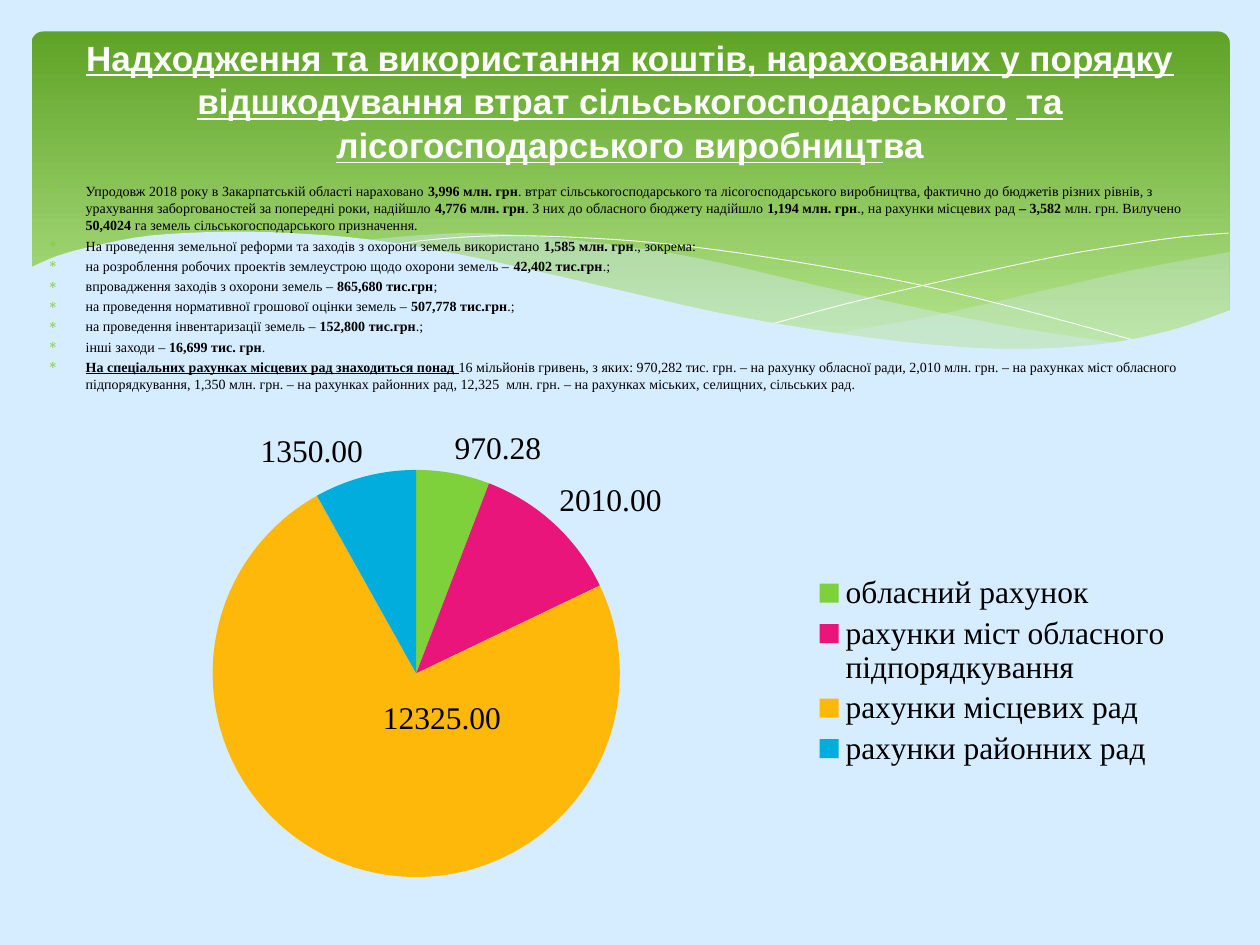
from lxml import etree
from pptx import Presentation
from pptx.chart.data import CategoryChartData
from pptx.dml.color import RGBColor
from pptx.enum.chart import XL_CHART_TYPE, XL_LABEL_POSITION, XL_LEGEND_POSITION
from pptx.enum.shapes import MSO_SHAPE
from pptx.enum.text import MSO_ANCHOR, MSO_AUTO_SIZE, PP_ALIGN
from pptx.oxml import parse_xml
from pptx.oxml.ns import nsdecls, qn
from pptx.util import Inches, Pt

PIE = XL_CHART_TYPE.PIE
OUT, MID = XL_LABEL_POSITION.OUTSIDE_END, XL_LABEL_POSITION.CENTER
RIGHT = XL_LEGEND_POSITION.RIGHT
ROUND = MSO_SHAPE.ROUNDED_RECTANGLE
CENTER, MIDDLE, FIXED = PP_ALIGN.CENTER, MSO_ANCHOR.MIDDLE, MSO_AUTO_SIZE.NONE

COLORS = {"sky": "D6ECFF", "dark": "5FA326", "light": "B2E389", "white": "FFFFFF",
          "black": "000000", "green": "7FD13B", "pink": "EA157A",
          "gold": "FEB80A", "blue": "00ADDC"}

TITLE = ("Надходження та використання коштів, нарахованих у порядку відшкодування "
         "втрат сільськогосподарського\t та лісогосподарського виробницт", "ва")

ITEMS = [
    "Упродовж 2018 року в Закарпатській області нараховано *3,996 млн. грн*. втрат "
    "сільськогосподарського та лісогосподарського виробництва, фактично до бюджетів "
    "різних рівнів, з урахування заборгованостей за попередні роки, надійшло "
    "*4,776 млн. грн*. З них до обласного бюджету надійшло *1,194 млн. грн*., "
    "на рахунки місцевих рад *– 3,582 *млн. грн. Вилучено *50,4024 *га земель "
    "сільськогосподарського призначення.",
    "На проведення земельної реформи та заходів з охорони земель використано "
    "*1,585 млн. грн*., зокрема:",
    "на розроблення робочих проектів землеустрою щодо охорони земель – *42,402 тис.грн*.;",
    "впровадження заходів з охорони земель – *865,680 тис.грн*;",
    "на проведення нормативної грошової оцінки земель – *507,778 тис.грн*.;",
    "на проведення інвентаризації земель – *152,800 тис.грн*.;",
    "інші заходи – *16,699 тис. грн*.",
    "*На спеціальних рахунках місцевих рад знаходиться понад *16 мільйонів гривень, "
    "з яких: 970,282 тис. грн. – на рахунку обласної ради, 2,010 млн. грн. – на рахунках "
    "міст обласного підпорядкування, 1,350 млн. грн. – на рахунках районних рад, "
    "12,325  млн. грн. – на рахунках міських, селищних, сільських рад.",
]

SHARES = [("обласний рахунок", 970.28, "green"),
          ("рахунки міст обласного підпорядкування", 2010, "pink"),
          ("рахунки місцевих рад", 12325, "gold"),
          ("рахунки районних рад", 1350, "blue")]

FAN = [[(9.53, .16), (8.83, .29), (8.38, .39), (7.56, .58), (7.06, .69), (6.38, .81)],
       [(6.38, .81), (6.96, .88), (7.58, .93), (8.12, .93), (8.66, .88), (9.12, .78),
        (9.53, .63)]]
BAND = [[(8.7, .89), (7.84, .76), (7.18, .63), (6.45, .47), (6.06, .38), (5.46, .24),
         (4.91, .14), (4.19, .05), (3.57, .01), (3.05, .03), (2.63, .07)],
        [(2.63, .07), (3.19, .15), (3.81, .27), (4.68, .48), (5.43, .64), (6.11, .77),
         (6.72, .86), (7.38, .93), (7.95, .94), (8.44, .92), (8.7, .89)]]
FALL = [[(2.86, .11), (3.21, .06), (3.78, .03), (4.46, .05), (5.1, .1), (5.85, .2),
         (6.72, .35), (7.37, .49), (8.08, .67), (8.84, .88)]]
RISE = [[(5.9, .73), (6.49, .57), (7.25, .39), (8.13, .2), (8.72, .1), (9.15, .04),
         (9.52, .01)]]
COVER = [[(9.54, .62), (9.07, .78), (8.52, .89), (7.86, .93), (7.21, .9), (6.45, .81),
          (5.56, .66), (4.8, .49), (4.24, .36), (3.42, .18), (2.69, .06), (2.07, .01),
          (1.54, 0), (.96, .03), (.53, .11), (.23, .19), (0, .29)],
         [(0, 1.45), (9.54, 1.45)]]


def color(name):
    return RGBColor.from_string(COLORS[name])


def paint(fill, name):
    fill.solid()
    fill.fore_color.rgb = color(name)


def style(obj, **vals):
    for key, val in vals.items():
        setattr(obj, key, val)


def place(shape, box):
    style(shape, **dict(zip(("left", "top", "width", "height"), map(Inches, box))))


def smooth(pts, steps=4):
    ends = [pts[0], *pts, pts[-1]]
    out = []
    for a, b, c, d in zip(ends, ends[1:], ends[2:], ends[3:]):
        for t in (n / steps for n in range(steps)):
            out.append(tuple(
                q + t * (r - p) / 2 + t * t * (p - 2.5 * q + 2 * r - s / 2)
                + t ** 3 * (1.5 * (q - r) + (s - p) / 2)
                for p, q, r, s in zip(a, b, c, d)))
    return out + [pts[-1]]


def wave(slide, box, edges, fill=None, alpha=100):
    pts = [(Inches(box[0] + x), Inches(box[1] + y))
           for edge in edges for x, y in smooth(edge)]
    pen = slide.shapes.build_freeform(*pts[0])
    pen.add_line_segments(pts[1:], close=bool(fill))
    shape = pen.convert_to_shape()
    shape.shadow.inherit = False
    if fill:
        paint(shape.fill, fill)
        tone = shape.fill._xPr.find(".//" + qn("a:srgbClr"))
        etree.SubElement(tone, qn("a:alpha"), val=str(alpha * 1000))
        shape.line.fill.background()
    else:
        shape.fill.background()
        paint(shape.line.fill, "white")
        shape.line.width = Pt(0.5)


def banner(slide, box):
    shape = slide.shapes.add_shape(ROUND, *map(Inches, box))
    shape.adjustments[0] = 0.034
    shape.shadow.inherit = False
    shape.line.fill.background()
    shape.fill.gradient()
    shape.fill.gradient_angle = 270
    for stop, name, pos in zip(shape.fill.gradient_stops, ("dark", "light"), (0, 0.9)):
        stop.color.rgb = color(name)
        stop.position = pos


def waves(slide, box):
    wave(slide, box, FAN, "sky", 29)
    wave(slide, box, BAND, "sky", 40)
    wave(slide, box, FALL)
    wave(slide, box, RISE)
    wave(slide, box, COVER, "sky")


def write(para, text, tone, **font):
    run = para.add_run()
    run.text = text
    style(run.font, **font)
    run.font.color.rgb = color(tone)


def heading(slide, box):
    shape = slide.shapes.title
    place(shape, box)
    frame = shape.text_frame
    style(frame, auto_size=FIXED, word_wrap=True, vertical_anchor=MIDDLE,
          margin_bottom=Inches(0.38))
    para = frame.paragraphs[0]
    style(para, alignment=CENTER, line_spacing=1.04)
    for text, under in zip(TITLE, (True, False)):
        write(para, text, "white", name="Arial", size=Pt(20), bold=True, underline=under)
    slide.shapes._spTree.append(shape.element)


def bullet(para):
    props = para._p.get_or_add_pPr()
    props.set("marL", str(Inches(0.3)))
    props.set("indent", str(-Inches(0.3)))
    tint = etree.SubElement(props, qn("a:buClr"))
    etree.SubElement(tint, qn("a:srgbClr"), val=COLORS["green"])
    etree.SubElement(props, qn("a:buFont"), typeface="Symbol")
    etree.SubElement(props, qn("a:buChar"), char="∗")


def report(slide, box):
    shape = slide.placeholders[1]
    place(shape, box)
    frame = shape.text_frame
    style(frame, auto_size=FIXED, word_wrap=True)
    for n, item in enumerate(ITEMS):
        para = frame.add_paragraph() if n else frame.paragraphs[0]
        style(para, space_before=Pt(1.6), line_spacing=1.04)
        bullet(para)
        for k, text in enumerate(item.split("*")):
            if text:
                bold = k % 2 == 1
                write(para, text, "black", name="Times New Roman", size=Pt(8),
                      bold=bold, underline=bold and item.startswith("*"))
    slide.shapes._spTree.append(shape.element)


def layout(inner, **vals):
    mark = "".join(f'<c:{key} val="{val}"/>' for key, val in vals.items())
    return parse_xml(f'<c:layout {nsdecls("c")}><c:manualLayout>{inner}{mark}'
                     '</c:manualLayout></c:layout>')


def pie(slide, box):
    data = CategoryChartData(number_format="0.00")
    data.categories = [name for name, _, _ in SHARES]
    data.add_series("Series 1", [val for _, val, _ in SHARES])
    chart = slide.shapes.add_chart(PIE, *map(Inches, box), data).chart
    style(chart, has_title=False, has_legend=True)
    style(chart.font, name="Times New Roman", size=Pt(18))
    chart.font.color.rgb = color("black")
    style(chart.legend, position=RIGHT, include_in_layout=False)
    plot = chart.plots[0]
    style(plot, vary_by_categories=True, has_data_labels=True)
    series = plot.series[0]
    style(series.data_labels, show_value=True, position=OUT,
          number_format="0.00", number_format_is_linked=False)
    for n, (_, _, tone) in enumerate(SHARES):
        paint(series.points[n].format.fill, tone)
    label = series.points[2].data_label
    label.position = MID
    style(label.font, name="Times New Roman", size=Pt(18))
    mark = chart.element.find(".//" + qn("c:dLbl"))
    mark.insert(1, layout("", x=0.05, y=-0.1))
    area = chart.element.find(".//" + qn("c:plotArea"))
    for old in area.findall(qn("c:layout")):
        area.remove(old)
    area.insert(0, layout('<c:layoutTarget val="inner"/><c:xMode val="edge"/>'
                          '<c:yMode val="edge"/>', x=0.14, y=0.11, w=0.36, h=0.79))


def main():
    deck = Presentation()
    style(deck, slide_width=Inches(10), slide_height=Inches(7.5))
    slide = deck.slides.add_slide(deck.slide_layouts[1])
    paint(slide.background.fill, "sky")
    banner(slide, (0.25, 0.25, 9.51, 2.7))
    waves(slide, (0.23, 1.84, 9.54, 1.45))
    heading(slide, (0.5, 0.37, 9, 1.18))
    pie(slide, (0.43, 3.28, 8.98, 4.09))
    report(slide, (0.28, 1.39, 9.45, 5.31))
    deck.save("out.pptx")


if __name__ == "__main__":
    main()
